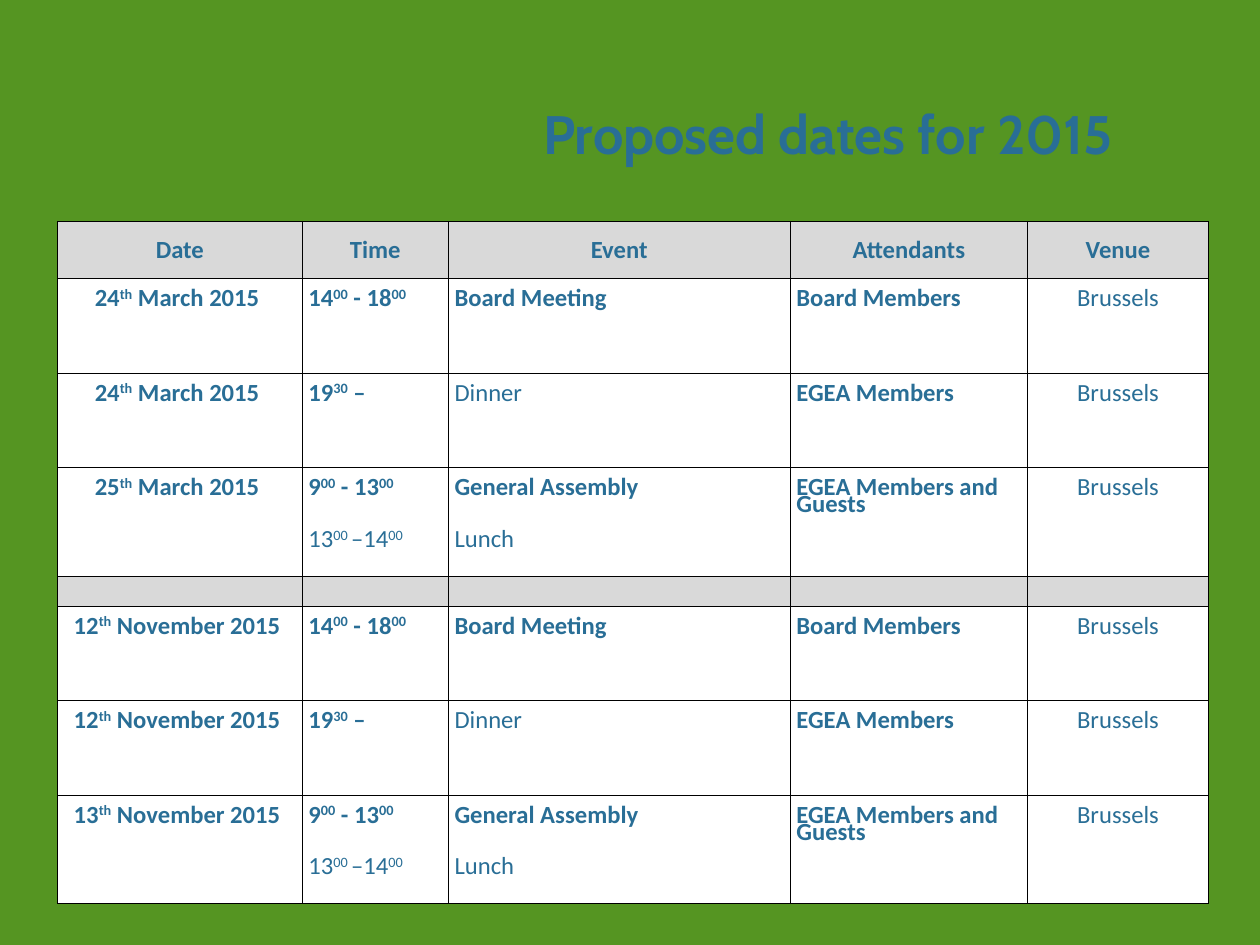
from dataclasses import dataclass

from lxml.etree import SubElement
from pptx import Presentation
from pptx.dml.color import RGBColor
from pptx.enum.text import MSO_ANCHOR, MSO_AUTO_SIZE, PP_ALIGN
from pptx.oxml.ns import qn
from pptx.util import Cm, Pt

TITLE = "Proposed dates for 2015"
HEADINGS = ("Date", "Time", "Event", "Attendants", "Venue")
MEETING_DATES = (
    ("24^th^ March 2015 ", "24^th^ March 2015 ", "25^th^ March 2015 "),
    ("12^th^ November 2015 ", "12^th^ November 2015 ", "13^th^ November 2015 "),
)
PROGRAMME = (
    (("14^00^ - 18^00^",), ("Board Meeting",), ("Board Members",)),
    (("19^30^ –",), ("Dinner",), ("EGEA Members",)),
    (("9^00^ - 13^00^", "13^00 ^–14^00^"), ("General Assembly", "Lunch"),
     ("EGEA Members and Guests",)),
)
VENUE = "Brussels"
PLAIN_LINES = {"Dinner", "Lunch", "13^00 ^–14^00^", VENUE}
CENTRED_COLUMNS = {HEADINGS.index("Date"), HEADINGS.index("Venue")}

COLUMN_WIDTHS = (7.01, 4.19, 9.8, 6.81, 5.18)
HEADING_HEIGHT, DIVIDER_HEIGHT = 1.65, 0.86
PROGRAMME_HEIGHTS = (2.71, 2.71, 3.11)


@dataclass(frozen=True)
class Theme:
    background: RGBColor = RGBColor.from_string("559522")
    text: RGBColor = RGBColor.from_string("296E96")
    band: RGBColor = RGBColor.from_string("D9D9D9")
    paper: RGBColor = RGBColor.from_string("FFFFFF")
    border: str = "000000"
    title_font: str = "Cabin"
    table_font: str = "Calibri"
    title_size: Pt = Pt(44)
    table_size: Pt = Pt(20)
    line_height: Pt = Pt(14)


THEME = Theme()


def style(font, name, size, bold):
    font.name, font.size, font.bold = name, size, bold
    font.color.rgb = THEME.text


def write_line(para, line, bold, centred):
    para.alignment = PP_ALIGN.CENTER if centred else PP_ALIGN.LEFT
    for index, part in enumerate(line.split("^")):
        if part:
            span = para.add_run()
            span.text = part
            style(span.font, THEME.table_font, THEME.table_size, bold)
            if index % 2:
                span.font._element.set("baseline", "30000")


def format_cell(cell, colour):
    cell.margin_left = cell.margin_right = Cm(0.18)
    cell.margin_top = cell.margin_bottom = 0
    properties = cell._tc.get_or_add_tcPr()
    for side in ("a:lnL", "a:lnR", "a:lnT", "a:lnB"):
        line = SubElement(properties, qn(side), w=str(Pt(1)))
        fill = SubElement(line, qn("a:solidFill"))
        SubElement(fill, qn("a:srgbClr"), val=THEME.border)
    cell.fill.solid()
    cell.fill.fore_color.rgb = colour


def fill_heading(cell, heading):
    format_cell(cell, THEME.band)
    cell.vertical_anchor = MSO_ANCHOR.MIDDLE
    write_line(cell.text_frame.paragraphs[0], heading, True, True)


def fill_entry(cell, lines, centred):
    format_cell(cell, THEME.paper)
    cell.margin_top = THEME.line_height
    frame = cell.text_frame
    for index, line in enumerate(lines):
        para = frame.add_paragraph() if index else frame.paragraphs[0]
        para.line_spacing = THEME.line_height
        if index:
            para.space_before = 2 * THEME.line_height
        write_line(para, line, line not in PLAIN_LINES, centred)


def schedule():
    for session, dates in enumerate(MEETING_DATES):
        if session:
            yield DIVIDER_HEIGHT, None
        for date, entry, height in zip(dates, PROGRAMME, PROGRAMME_HEIGHTS):
            yield height, ((date,), *entry, (VENUE,))


def add_title(slide):
    title = slide.shapes.title
    title.left, title.top = Cm(15.21), Cm(1.55)
    title.width, title.height = Cm(19.66), Cm(4.52)
    frame = title.text_frame
    frame.text = TITLE
    frame.word_wrap = True
    frame.auto_size = MSO_AUTO_SIZE.NONE
    frame.vertical_anchor = MSO_ANCHOR.MIDDLE
    frame.margin_left = frame.margin_right = Cm(0.36)
    frame.margin_top = frame.margin_bottom = Cm(0.18)
    para = frame.paragraphs[0]
    para.alignment = PP_ALIGN.LEFT
    style(para.runs[0].font, THEME.title_font, THEME.title_size, True)


def add_schedule(slide):
    rows = list(schedule())
    heights = [HEADING_HEIGHT] + [height for height, entries in rows]
    table = slide.shapes.add_table(
        len(heights), len(HEADINGS), Cm(1.65), Cm(6.35),
        Cm(sum(COLUMN_WIDTHS)), Cm(sum(heights))).table
    table.first_row = table.horz_banding = False
    for column, width in zip(table.columns, COLUMN_WIDTHS):
        column.width = Cm(width)
    for row, height in zip(table.rows, heights):
        row.height = Cm(height)
    for column, heading in enumerate(HEADINGS):
        fill_heading(table.cell(0, column), heading)
        for row, (height, entries) in enumerate(rows, 1):
            cell = table.cell(row, column)
            if entries:
                fill_entry(cell, entries[column], column in CENTRED_COLUMNS)
            else:
                format_cell(cell, THEME.band)


def main():
    deck = Presentation()
    deck.slide_width, deck.slide_height = Cm(36.12), Cm(27.1)
    slide = deck.slides.add_slide(deck.slide_layouts.get_by_name("Title Only"))
    slide.background.fill.solid()
    slide.background.fill.fore_color.rgb = THEME.background
    add_title(slide)
    add_schedule(slide)
    deck.save("out.pptx")


if __name__ == "__main__":
    main()
